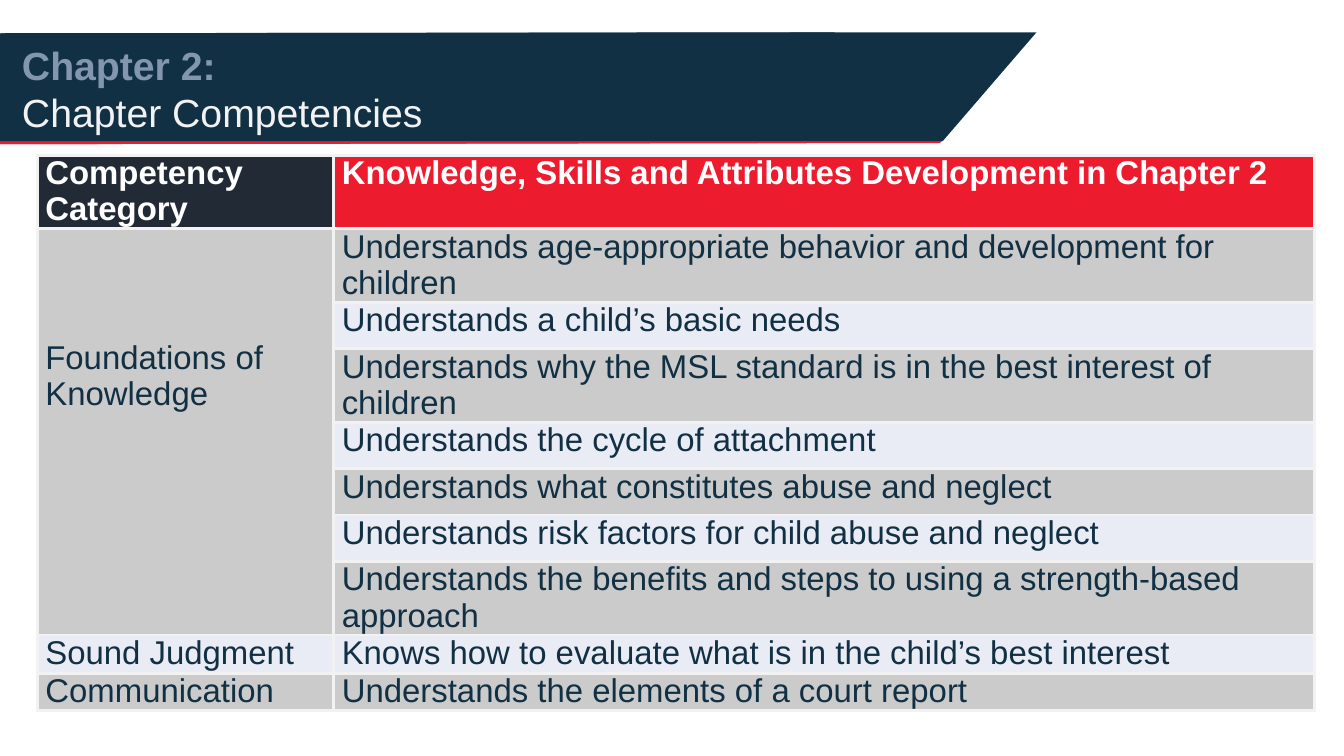
from lxml.etree import SubElement
from pptx import Presentation
from pptx.dml.color import RGBColor
from pptx.oxml.ns import qn
from pptx.util import Inches, Pt

NAVY = RGBColor(0x11, 0x30, 0x44)
RED = RGBColor(0xED, 0x1B, 0x2E)
CHARCOAL = RGBColor(0x22, 0x2A, 0x35)
SLATE = RGBColor(0x82, 0x96, 0xB0)
OFF_WHITE = RGBColor(0xF2, 0xF2, 0xF2)
WHITE = RGBColor(0xFF, 0xFF, 0xFF)
GREY = RGBColor(0xCB, 0xCB, 0xCB)
LAVENDER = RGBColor(0xE9, 0xEB, 0xF5)

presentation = Presentation()
presentation.slide_width = Inches(13.33)
presentation.slide_height = Inches(7.5)
slide = presentation.slides.add_slide(presentation.slide_layouts[6])


def set_borders(cell, color, width):
    properties = cell._tc.get_or_add_tcPr()
    for position, side in enumerate(("a:lnL", "a:lnR", "a:lnT", "a:lnB")):
        line = properties.makeelement(qn(side), {"w": str(Pt(width))})
        fill = SubElement(line, qn("a:solidFill"))
        SubElement(fill, qn("a:srgbClr"), val=str(color))
        properties.insert(position, line)


# Title banner: a wide and a narrower band, each with a red underline
banner_outlines = [
    (RED, [(-0.01, 1.38), (9.36, 1.38), (9.32, 1.42), (-0.01, 1.43)]),
    (NAVY, [(10.28, 0.32), (0, 0.33), (-0.01, 1.4), (9.35, 1.4)]),
    (RED, [(0, 1.38), (7.54, 1.38), (7.51, 1.42), (0, 1.43)]),
    (NAVY, [(8.28, 0.32), (0.01, 0.33), (0, 1.4), (7.53, 1.4)]),
]
for color, points in banner_outlines:
    corners = [(Inches(x), Inches(y)) for x, y in points]
    builder = slide.shapes.build_freeform(*corners[0])
    builder.add_line_segments(corners[1:], close=True)
    band = builder.convert_to_shape()
    band.shadow.inherit = False
    band.fill.solid()
    band.fill.fore_color.rgb = color
    band.line.fill.background()

title_box = slide.shapes.add_textbox(Inches(0.12), Inches(0.36), Inches(7.24), Inches(1.99))
title_frame = title_box.text_frame
title_frame.word_wrap = True
title_frame.text = "Chapter 2:\nChapter Competencies"
for paragraph, color, bold in zip(title_frame.paragraphs, (SLATE, OFF_WHITE), (True, False)):
    paragraph.font.name = "Arial"
    paragraph.font.size = Pt(28)
    paragraph.font.bold = bold
    paragraph.font.color.rgb = color

# Competency table
FOUNDATION_ROWS = 7
competencies = [
    ("Competency Category", "Knowledge, Skills and Attributes Development in Chapter 2", 0.73),
    ("Foundations of Knowledge",
     "Understands age-appropriate behavior and development for children", 0.73),
    ("", "Understands a child’s basic needs", 0.46),
    ("", "Understands why the MSL standard is in the best interest of children", 0.73),
    ("", "Understands the cycle of attachment", 0.46),
    ("", "Understands what constitutes abuse and neglect", 0.46),
    ("", "Understands risk factors for child abuse and neglect", 0.46),
    ("", "Understands the benefits and steps to using a strength-based approach", 0.73),
    ("Sound Judgment", "Knows how to evaluate what is in the child’s best interest", 0.38),
    ("Communication", "Understands the elements of a court report", 0.37),
]
column_widths = (2.94, 9.73)
table_height = sum(height for _, _, height in competencies)
table = slide.shapes.add_table(
    len(competencies), len(column_widths), Inches(0.37), Inches(1.54),
    Inches(sum(column_widths)), Inches(table_height)).table
for column, width in zip(table.columns, column_widths):
    column.width = Inches(width)

for row_index, (category, skill, height) in enumerate(competencies):
    table.rows[row_index].height = Inches(height)
    is_header = row_index == 0
    band_color = GREY if row_index % 2 else LAVENDER
    row_colors = (CHARCOAL, RED) if is_header else (band_color, band_color)
    for column_index, text in enumerate((category, skill)):
        cell = table.cell(row_index, column_index)
        cell.margin_left = cell.margin_right = Inches(0.08)
        cell.margin_top = cell.margin_bottom = 0
        cell.fill.solid()
        cell.fill.fore_color.rgb = row_colors[column_index]
        set_borders(cell, OFF_WHITE, 2.25)
        cell.text = text
        paragraph = cell.text_frame.paragraphs[0]
        paragraph.line_spacing = Pt(26)
        paragraph.font.name = "Arial"
        paragraph.font.size = Pt(23.5)
        paragraph.font.bold = is_header
        paragraph.font.color.rgb = WHITE if is_header else NAVY

foundations = table.cell(1, 0)
foundations.merge(table.cell(FOUNDATION_ROWS, 0))
foundations.margin_top = Inches(1.1)

presentation.save("out.pptx")
